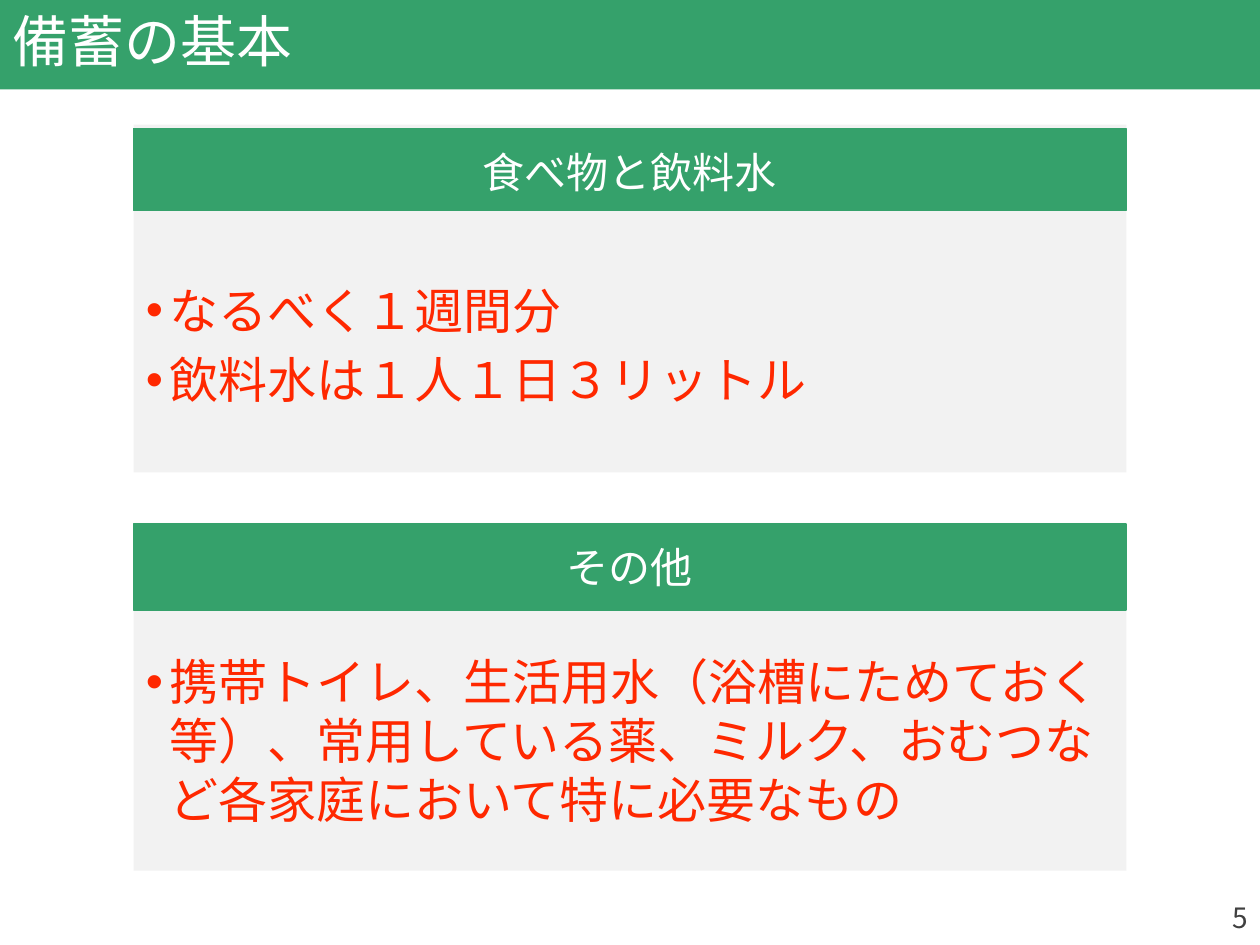
from dataclasses import dataclass

from lxml.etree import SubElement
from pptx import Presentation
from pptx.dml.color import RGBColor
from pptx.enum.shapes import MSO_SHAPE
from pptx.enum.text import MSO_ANCHOR, MSO_AUTO_SIZE, PP_ALIGN
from pptx.oxml.ns import qn
from pptx.util import Inches, Pt

FONT = "Noto Sans CJK JP"
GREEN = RGBColor(0x35, 0xA1, 0x6B)
GREY = RGBColor(0xF2, 0xF2, 0xF2)
DARK = RGBColor(0x40, 0x40, 0x40)
RED = RGBColor(0xFF, 0x28, 0x00)
WHITE = RGBColor(0xFF, 0xFF, 0xFF)


@dataclass
class Box:
    left: float
    top: float
    width: float
    height: float

    def emu(self) -> list:
        return [Inches(n) for n in (self.left, self.top, self.width, self.height)]


@dataclass
class Panel:
    head: str
    items: list[str]
    top: float
    bar: Box
    body: Box


def add_rect(slide, box: Box, fill: RGBColor, line: RGBColor | None = None):
    rect = slide.shapes.add_shape(MSO_SHAPE.RECTANGLE, *box.emu())
    rect.shadow.inherit = False
    rect.fill.solid()
    rect.fill.fore_color.rgb = fill
    if line is None:
        rect.line.fill.background()
    else:
        rect.line.color.rgb = line
        rect.line.width = Pt(1)
    return rect


def set_text(shape, text: str, size: int, color: RGBColor, align=PP_ALIGN.LEFT):
    frame = shape.text_frame
    frame.word_wrap = True
    frame.text = text
    for para in frame.paragraphs:
        para.alignment = align
        for run in para.runs:
            run.font.size = Pt(size)
            run.font.name = FONT
            run.font.color.rgb = color
            # East Asian glyphs take their own typeface entry
            SubElement(run.font._element, qn("a:ea")).set("typeface", FONT)
    return frame


def add_text(slide, box: Box, text: str, size: int, color: RGBColor, align=PP_ALIGN.LEFT):
    return set_text(slide.shapes.add_textbox(*box.emu()), text, size, color, align)


def add_dot(para) -> None:
    para.space_after = Pt(6)
    props = para._p.get_or_add_pPr()
    props.set("marL", str(Inches(0.19)))
    props.set("indent", str(-Inches(0.19)))
    SubElement(props, qn("a:buFont")).set("typeface", "Arial")
    SubElement(props, qn("a:buChar")).set("char", "•")


def add_panel(slide, panel: Panel) -> None:
    add_rect(slide, Box(1.06, panel.top, 7.88, 2.76), GREY)
    bar = panel.bar
    add_rect(slide, bar, GREEN, GREEN)
    head = Box(3.26, bar.top + 0.09, 3.47, 0.5)
    frame = add_text(slide, head, panel.head, 24, WHITE, PP_ALIGN.CENTER)
    frame.auto_size = MSO_AUTO_SIZE.SHAPE_TO_FIT_TEXT
    frame = add_text(slide, panel.body, "\n".join(panel.items), 28, RED)
    frame.vertical_anchor = MSO_ANCHOR.MIDDLE
    for para in frame.paragraphs:
        add_dot(para)


PANELS = [
    Panel("食べ物と飲料水", ["なるべく１週間分", "飲料水は１人１日３リットル"],
          0.99, Box(1.06, 1.02, 7.88, 0.65), Box(1.06, 1.68, 7.88, 2.11)),
    Panel("その他",
          ["携帯トイレ、生活用水（浴槽にためておく等）、常用している薬、"
           "ミルク、おむつなど各家庭において特に必要なもの"],
          4.15, Box(1.06, 4.16, 7.88, 0.68), Box(1.06, 4.84, 7.88, 2.07)),
]


def main() -> None:
    deck = Presentation()
    deck.slide_width, deck.slide_height = Inches(10), Inches(7.5)
    slide = deck.slides.add_slide(deck.slide_layouts[6])

    # Title band
    band = add_rect(slide, Box(0, 0, 10, 0.71), GREEN)
    frame = set_text(band, "備蓄の基本", 32, WHITE)
    frame.vertical_anchor = MSO_ANCHOR.MIDDLE
    frame.paragraphs[0].line_spacing = 0.9

    # Page number
    add_text(slide, Box(7.75, 7.1, 2.25, 0.4), "5", 16, DARK, PP_ALIGN.RIGHT)

    # Panels
    for panel in PANELS:
        add_panel(slide, panel)

    deck.save("out.pptx")


if __name__ == "__main__":
    main()
